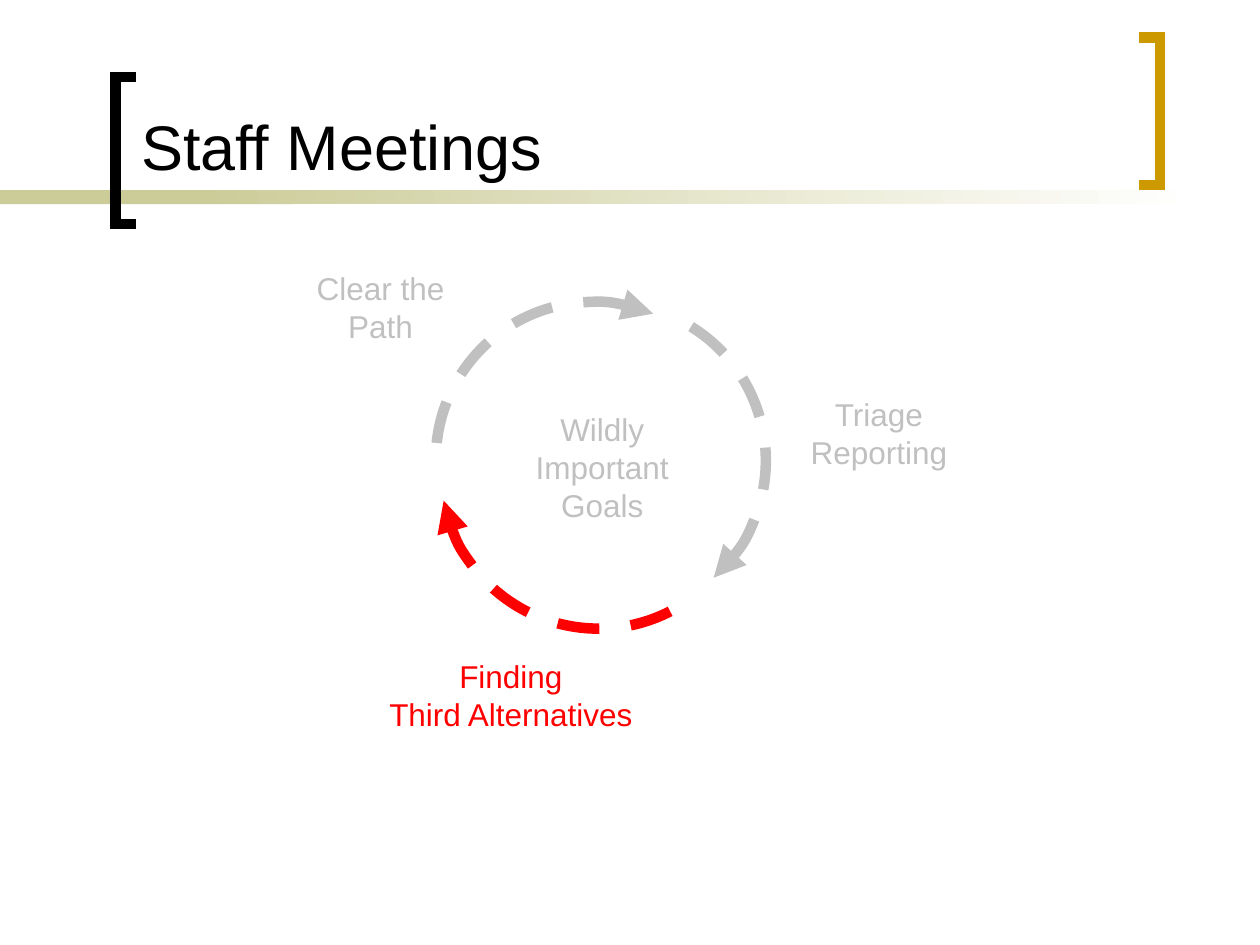
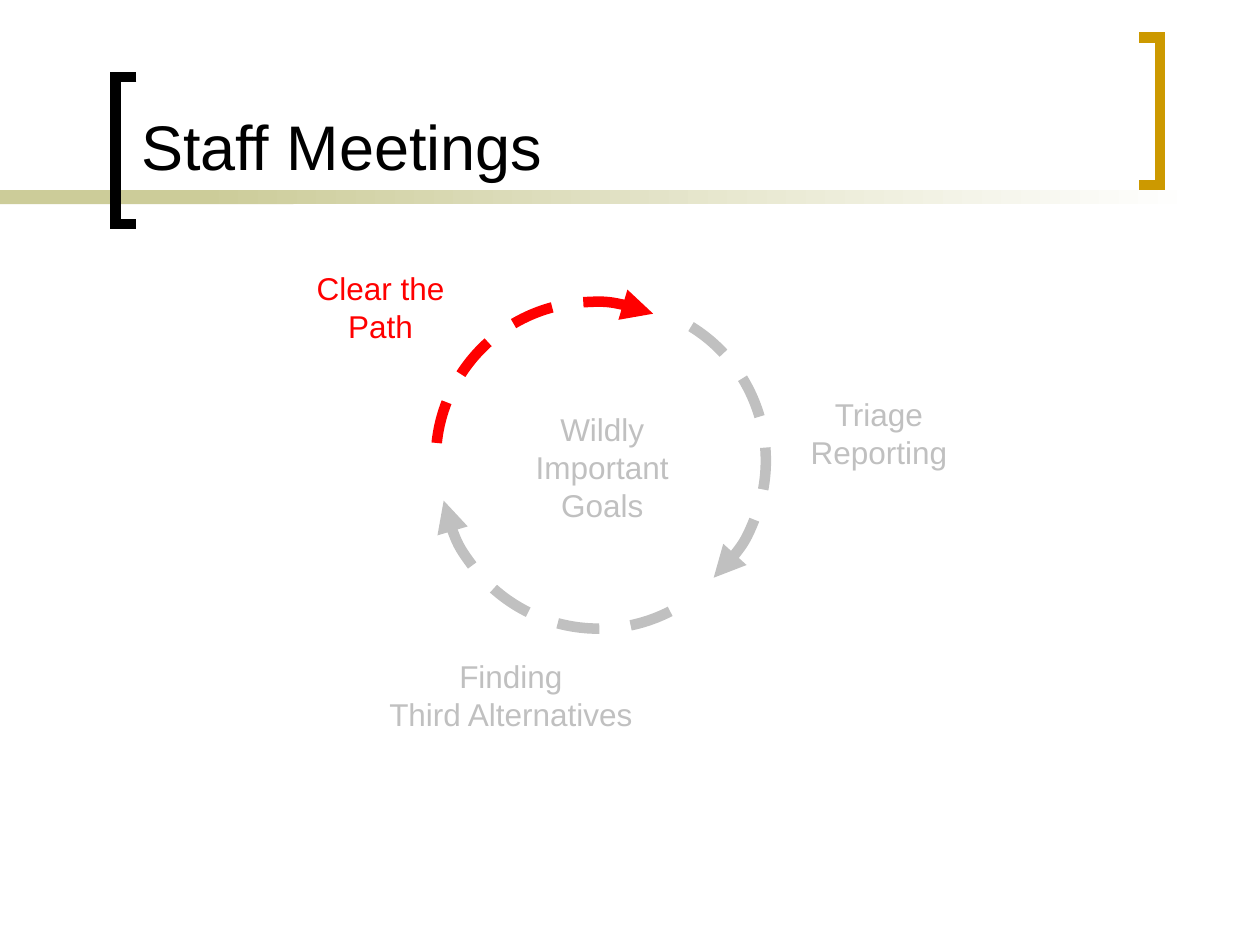
import math
from collections import namedtuple

import lxml.etree
import pptx
import pptx.dml.color
import pptx.enum.dml
import pptx.enum.shapes
import pptx.enum.text
import pptx.oxml.ns
import pptx.util

RGBColor = pptx.dml.color.RGBColor
qn = pptx.oxml.ns.qn
BLACK = RGBColor(0x00, 0x00, 0x00)
WHITE = RGBColor(0xFF, 0xFF, 0xFF)
OLIVE = RGBColor(0xCC, 0xCC, 0x99)
GOLD = RGBColor(0xCC, 0x99, 0x00)
MUTED = RGBColor(0xC0, 0xC0, 0xC0)
ACTIVE = RGBColor(0xFF, 0x00, 0x00)

# The slide is a grid of 100 columns by 75 rows of square cells
COLUMNS, ROWS = 100, 75
CELL = pptx.util.Inches(0.1)
Box = namedtuple("Box", "left top width height")
HEADER = Box(0, 3, 100, 14.8)
CYCLE = Box(24.2, 20.8, 52, 38)

TITLE_FONT = {"name": "Arial", "size": pptx.util.Pt(36)}
LABEL_FONT = {"name": "Arial", "size": pptx.util.Pt(18)}
STROKE = pptx.util.Pt(6)

# Every arc runs from its head through the bottom of the circle to its tail
RADIUS = 12.5
ARC_ANGLES = [math.radians(degrees) for degrees in (116, 90, 0)]

# Step: label lines, label box, left and top of the arc, turn of the arc
Step = namedtuple("Step", "lines label arc turn")
STEPS = {
    "path": Step(["Clear the", "Path"], Box(-0.1, 0.05, 12.2, 7), (10, 3.4), 176.3),
    "triage": Step(["Triage", "Reporting"], Box(39.1, 10.05, 12.9, 7), (22.2, 8.6), 292),
    "alternatives": Step(["Finding", "Third Alternatives"], Box(5.6, 30.85, 21.5, 7),
                         (11.4, 16.9), 53.2),
}
HUB_LINES, HUB_LABEL = ["Wildly", "Important", "Goals"], Box(17.3, 11.25, 12.6, 10)


def cells(*counts):
    return [round(count * CELL) for count in counts]


def inside(outer, inner):
    return Box(outer.left + inner.left, outer.top + inner.top, inner.width, inner.height)


def format_font(font, color, values):
    for name, value in values.items():
        setattr(font, name, value)
    font.color.rgb = color


def add_stroke(page, points, color):
    """Draw an open line with sharp corners through grid points."""
    start, *rest = [cells(*point) for point in points]
    builder = page.shapes.build_freeform(*start)
    builder.add_line_segments(rest, close=False)
    stroke = builder.convert_to_shape()
    stroke.shadow.inherit = False
    stroke.fill.background()
    stroke.line.width = STROKE
    stroke.line.color.rgb = color
    outline = stroke.element.spPr.find(qn("a:ln"))
    lxml.etree.SubElement(outline, qn("a:miter"), lim="800000")
    return stroke


def add_band(page, box):
    band = page.shapes.add_shape(pptx.enum.shapes.MSO_SHAPE.RECTANGLE, *cells(*box))
    band.shadow.inherit = False
    band.line.fill.background()
    return band


def add_bracket(page, box, lip, color):
    """A positive lip points right, a negative one left."""
    tip, bottom = box.left + lip, box.top + box.height
    points = [(tip, box.top), (box.left, box.top), (box.left, bottom), (tip, bottom)]
    return add_stroke(page, points, color)


def build_header(page, box):
    """Draw bands and brackets, then move them to the shared layout."""
    solid = add_band(page, inside(box, Box(0, 12.1, 23.3, 1.1)))
    solid.fill.solid()
    solid.fill.fore_color.rgb = OLIVE
    fade = add_band(page, inside(box, Box(15.8, 12.1, 79.2, 1.1)))
    fade.fill.gradient()
    fade.fill.gradient_angle = 0
    for stop, position, color in zip(fade.fill.gradient_stops, (0, 1), (OLIVE, WHITE)):
        stop.position = position
        stop.color.rgb = color
    left = add_bracket(page, inside(box, Box(9.17, 3.1, 0, 11.7)), 1.65, BLACK)
    right = add_bracket(page, inside(box, Box(92.05, 0, 0, 11.7)), -1.65, GOLD)

    layout = page.slide_layout
    for part in (solid, fade, left, right):
        layout.shapes.element.append(part.element)
    title = layout.placeholders[0]
    frame = cells(*inside(box, Box(10.2, 0.3, 78.3, 11.7)))
    for name, value in zip(("left", "top", "width", "height"), frame):
        setattr(title, name, value)
    title.text_frame.vertical_anchor = pptx.enum.text.MSO_ANCHOR.BOTTOM


def write_title(page, text):
    frame = page.shapes.title.text_frame
    frame.text = text
    frame.auto_size = pptx.enum.text.MSO_AUTO_SIZE.NONE
    para = frame.paragraphs[0]
    para.alignment = pptx.enum.text.PP_ALIGN.LEFT
    format_font(para.runs[0].font, BLACK, TITLE_FONT)


def add_label(page, box, lines, color):
    frame = page.shapes.add_textbox(*cells(*box)).text_frame
    frame.word_wrap = False
    frame.auto_size = pptx.enum.text.MSO_AUTO_SIZE.SHAPE_TO_FIT_TEXT
    for index, line in enumerate(lines):
        para = frame.add_paragraph() if index else frame.paragraphs[0]
        para.alignment = pptx.enum.text.PP_ALIGN.CENTER
        span = para.add_run()
        span.text = line
        format_font(span.font, color, LABEL_FONT)


def circle_point(angle, handle=0):
    """Give a point on the arc's circle, shifted along its tangent."""
    across = math.cos(angle) - handle * math.sin(angle)
    down = math.sin(angle) + handle * math.cos(angle)
    return RADIUS * (across - math.cos(ARC_ANGLES[0])), RADIUS * down


def add_arc_arrow(page, left, top, turn, color):
    """Draw a dashed arc as two curves, with an arrowhead at its start."""
    points = [circle_point(angle) for angle in ARC_ANGLES]
    arc = add_stroke(page, [(left + x, top + y) for x, y in points], color)
    lines = list(arc.element.iter(qn("a:lnTo")))
    for line, start, end in zip(lines, ARC_ANGLES, ARC_ANGLES[1:]):
        handle = 4 / 3 * math.tan((end - start) / 4)
        curve = lxml.etree.Element(qn("a:cubicBezTo"))
        for point in (circle_point(start, handle), circle_point(end, -handle),
                      circle_point(end)):
            x, y = cells(*point)
            lxml.etree.SubElement(curve, qn("a:pt"), x=str(x), y=str(y))
        line.getparent().replace(line, curve)
    arc.rotation = turn
    arc.line.dash_style = pptx.enum.dml.MSO_LINE.DASH
    outline = arc.element.spPr.find(qn("a:ln"))
    lxml.etree.SubElement(outline, qn("a:headEnd"), type="triangle")


def build_cycle(page, box, active):
    """Draw the ring of steps with one step highlighted."""
    colors = {name: ACTIVE if name == active else MUTED for name in STEPS}
    for name, step in STEPS.items():
        left, top = step.arc
        add_arc_arrow(page, box.left + left, box.top + top, step.turn, colors[name])
    add_label(page, inside(box, HUB_LABEL), HUB_LINES, MUTED)
    for name in ("triage", "alternatives", "path"):
        step = STEPS[name]
        add_label(page, inside(box, step.label), step.lines, colors[name])


def main():
    deck = pptx.Presentation()
    deck.slide_width, deck.slide_height = cells(COLUMNS, ROWS)
    layout = deck.slide_layouts.get_by_name("Title Only")
    for number, active in enumerate(("alternatives", "path")):
        page = deck.slides.add_slide(layout)
        if number == 0:
            build_header(page, HEADER)
        write_title(page, "Staff Meetings")
        build_cycle(page, CYCLE, active)
    deck.save("out.pptx")


if __name__ == "__main__":
    main()
